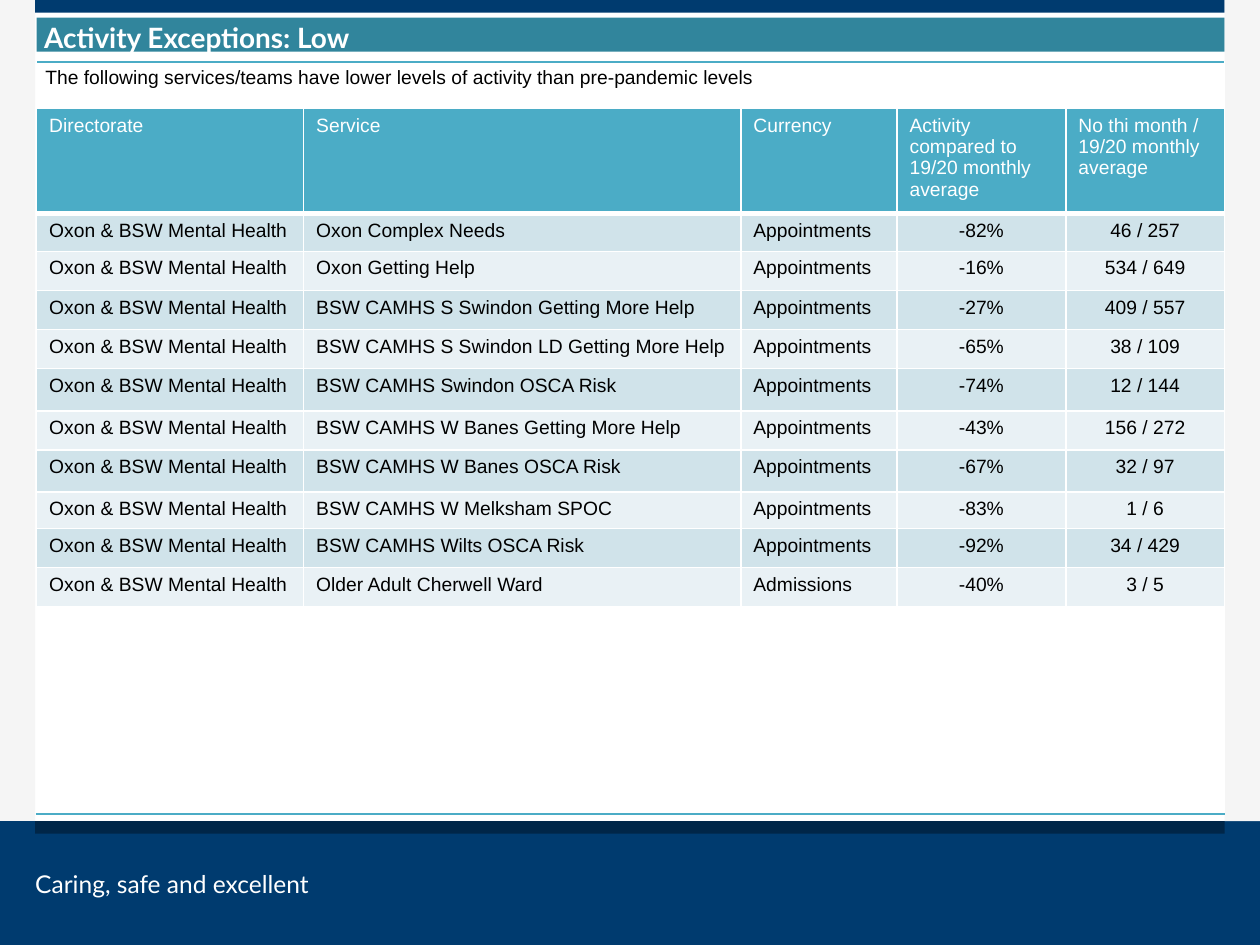
from dataclasses import dataclass

from lxml.etree import SubElement
from pptx import Presentation
from pptx.dml.color import RGBColor as RGB
from pptx.enum.shapes import MSO_SHAPE as SHAPE
from pptx.enum.text import MSO_ANCHOR as ANCHOR, MSO_AUTO_SIZE as FIT, PP_ALIGN as ALIGN
from pptx.oxml.ns import qn
from pptx.util import Inches, Pt


@dataclass(frozen=True)
class Theme:
    navy: str = "003B6F"
    dark_navy: str = "002648"
    grey: str = "F5F5F5"
    title_teal: str = "31859C"
    teal: str = "4BACC6"
    bands: tuple = ("D0E3EA", "E9F1F5")
    white: str = "FFFFFF"
    black: str = "000000"
    heading_font: str = "Lato"
    body_font: str = "Arial"
    title_size: int = 16
    motto_size: int = 14
    body_size: int = 11


theme = Theme()


def add_text(tf, text, font, size, color, bold=False):
    p = tf.paragraphs[0]
    r = p.add_run()
    r.text = text
    r.font.name, r.font.size, r.font.bold = font, Pt(size), bold
    r.font.color.rgb = RGB.from_string(color)
    return p


def add_borders(cell, color, **widths):
    """Draw cell edges; widths are points keyed L, R, T, B. Call before filling the cell."""
    for side in "LRTB":
        if side in widths:
            ln = SubElement(cell._tc.get_or_add_tcPr(), qn(f"a:ln{side}"), w=str(Pt(widths[side])))
            SubElement(SubElement(ln, qn("a:solidFill")), qn("a:srgbClr"), val=color)


prs = Presentation()
prs.slide_width, prs.slide_height = W, H = Inches(10), Inches(7.5)
s = prs.slides.add_slide(prs.slide_layouts[5])

# Page grid: side margins, content column and footer
margin = int(W * 0.028)
inner = W - 2 * margin
left, width = Inches(0.29), Inches(9.43)
footer_top = int(H * 0.869)
strip = Inches(0.1)

for x, y, w, h, color in [
    (0, 0, margin, footer_top, theme.grey),
    (0, footer_top, W, H - footer_top, theme.navy),
    (margin, footer_top, inner, strip, theme.dark_navy),
    (margin, 0, inner, strip, theme.navy),
    (W - margin, 0, margin, footer_top, theme.grey),
]:
    sp = s.shapes.add_shape(SHAPE.RECTANGLE, x, y, w, h)
    sp.shadow.inherit = False
    sp.fill.solid()
    sp.fill.fore_color.rgb = RGB.from_string(color)
    sp.line.fill.background()

# Footer motto
motto = s.shapes.add_textbox(margin, int(H * 0.92), Inches(3.07), Inches(0.24))
tf = motto.text_frame
tf.word_wrap = True
tf.margin_left = tf.margin_right = tf.margin_top = tf.margin_bottom = 0
add_text(tf, "Caring, safe and excellent", theme.heading_font, theme.motto_size, theme.white)

# Title bar
title = s.shapes.title
title.left, title.top, title.width, title.height = left, Inches(0.14), width, Inches(0.27)
title.fill.solid()
title.fill.fore_color.rgb = RGB.from_string(theme.title_teal)
tf = title.text_frame
tf.auto_size, tf.vertical_anchor = FIT.NONE, ANCHOR.MIDDLE
tf.margin_left = tf.margin_right = Inches(0.06)
tf.margin_top = tf.margin_bottom = Inches(0.03)
p = add_text(tf, "Activity Exceptions: Low", theme.heading_font, theme.title_size, theme.white, True)
p.alignment, p.line_spacing, p.space_after = ALIGN.LEFT, 1.15, Pt(5.6)

# Framing table with the introduction
frame_rows = [0.53, 5.44]
frame = s.shapes.add_table(2, 1, left, Inches(0.49), width, Inches(sum(frame_rows))).table
frame.first_row = frame.horz_banding = False
for row, height in zip(frame.rows, frame_rows):
    row.height = Inches(height)
intro, space = frame.cell(0, 0), frame.cell(1, 0)
add_borders(intro, theme.teal, T=1)
add_borders(space, theme.teal, B=1)
intro.fill.background()
space.fill.solid()
space.fill.fore_color.rgb = RGB.from_string(theme.white)
intro.margin_left = intro.margin_right = Inches(0.07)
intro.margin_top = intro.margin_bottom = Inches(0.04)
add_text(intro.text_frame,
         "The following services/teams have lower levels of activity than pre-pandemic levels",
         theme.body_font, theme.body_size, theme.black)

# Exceptions table
header = ["Directorate", "Service", "Currency", "Activity compared to 19/20 monthly average",
          "No thi month / 19/20 monthly average"]
exceptions = [
    ("Oxon Complex Needs", "Appointments", "-82%", "46 / 257"),
    ("Oxon Getting Help", "Appointments", "-16%", "534 / 649"),
    ("BSW CAMHS S Swindon Getting More Help", "Appointments", "-27%", "409 / 557"),
    ("BSW CAMHS S Swindon LD Getting More Help", "Appointments", "-65%", "38 / 109"),
    ("BSW CAMHS Swindon OSCA Risk", "Appointments", "-74%", "12 / 144"),
    ("BSW CAMHS W Banes Getting More Help", "Appointments", "-43%", "156 / 272"),
    ("BSW CAMHS W Banes OSCA Risk", "Appointments", "-67%", "32 / 97"),
    ("BSW CAMHS W Melksham SPOC", "Appointments", "-83%", "1 / 6"),
    ("BSW CAMHS Wilts OSCA Risk", "Appointments", "-92%", "34 / 429"),
    ("Older Adult Cherwell Ward", "Admissions", "-40%", "3 / 5"),
]
rows = [header] + [("Oxon & BSW Mental Health", *e) for e in exceptions]
col_widths = [2.12, 3.47, 1.24, 1.34, 1.26]
row_heights = [0.82, 0.3, 0.31, 0.31, 0.31, 0.34, 0.31, 0.33, 0.29, 0.31, 0.31]
table = s.shapes.add_table(len(rows), len(header), left, Inches(0.86), width,
                           Inches(sum(row_heights))).table
table.first_row = table.horz_banding = False
for col, w in zip(table.columns, col_widths):
    col.width = Inches(w)
for i, (values, height) in enumerate(zip(rows, row_heights)):
    table.rows[i].height = Inches(height)
    is_header = i == 0
    fill = theme.teal if is_header else theme.bands[(i - 1) % 2]
    color = theme.white if is_header else theme.black
    for j, value in enumerate(values):
        cell = table.cell(i, j)
        add_borders(cell, theme.white, L=1, R=1, T=3 if i == 1 else 1, B=3 if is_header else 1)
        cell.fill.solid()
        cell.fill.fore_color.rgb = RGB.from_string(fill)
        p = add_text(cell.text_frame, value, theme.body_font, theme.body_size, color)
        if j >= 3 and not is_header:
            p.alignment = ALIGN.CENTER

prs.save("out.pptx")
